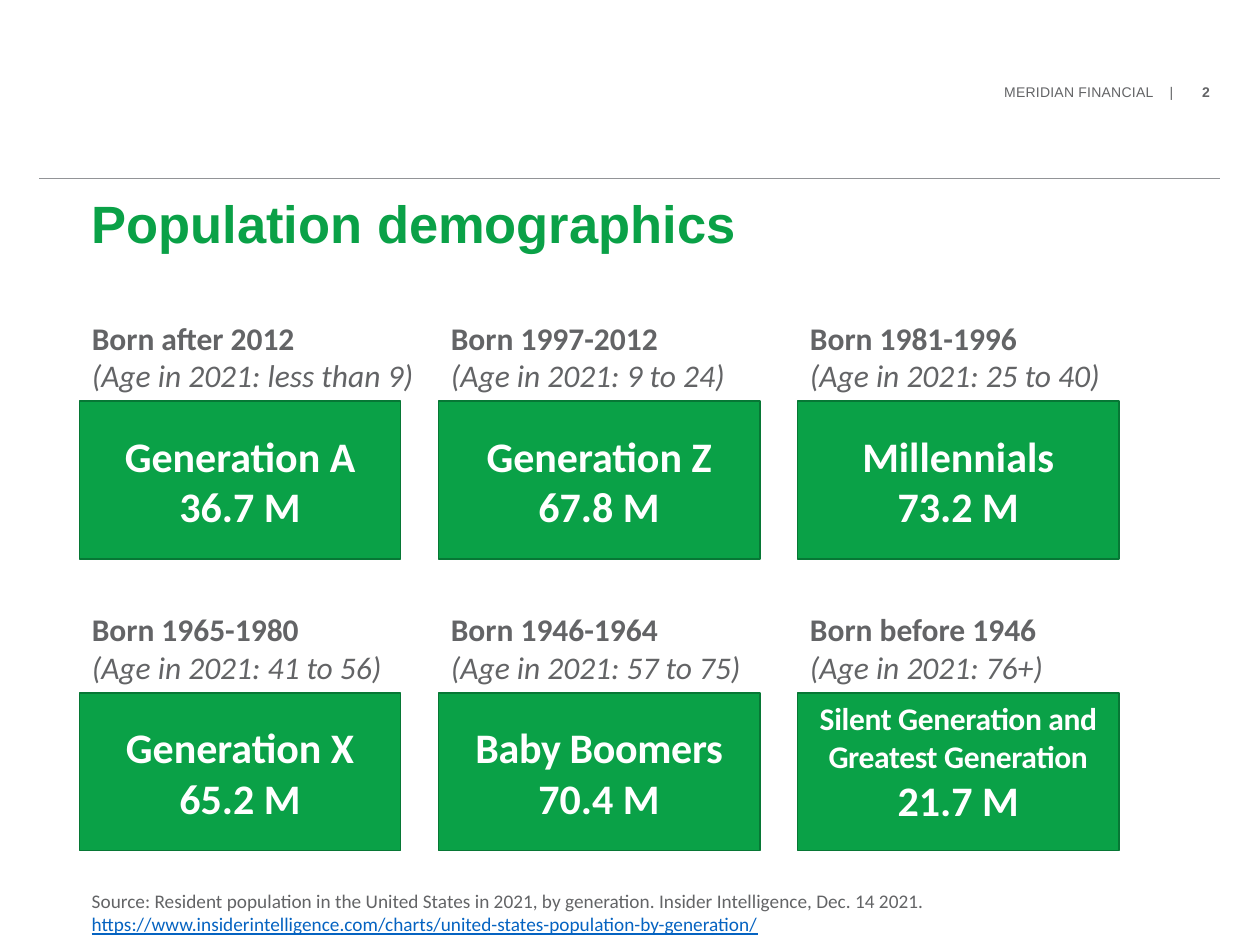
from lxml.etree import SubElement
from pptx import Presentation
from pptx.dml.color import RGBColor
from pptx.enum.shapes import MSO_CONNECTOR, MSO_SHAPE
from pptx.enum.text import MSO_ANCHOR, PP_ALIGN
from pptx.oxml.ns import qn
from pptx.util import Inches, Pt

GREEN = RGBColor(0x0A, 0xA1, 0x47)
DARK_GREEN = RGBColor(0x07, 0x77, 0x35)
GRAY = RGBColor(0x63, 0x64, 0x66)
RULE_GRAY = RGBColor(0x92, 0x94, 0x97)
LINK_BLUE = RGBColor(0x05, 0x63, 0xC1)
WHITE = RGBColor(0xFF, 0xFF, 0xFF)

# Grid in inches: three columns, two rows
LEFT, CARD_WIDTH, COLUMN_STEP = 0.63, 2.55, 2.85
TOP, ROW_STEP = 2.48, 2.315
CAPTION_HEIGHT, CARD_HEIGHT = 0.705, 1.25

# Birth years, age in 2021, generation, population, name size, name height
GENERATIONS = [
    ("after 2012", "less than 9", "Generation A", "36.7 M"),
    ("1997-2012", "9 to 24", "Generation Z", "67.8 M"),
    ("1981-1996", "25 to 40", "Millennials", "73.2 M"),
    ("1965-1980", "41 to 56", "Generation X", "65.2 M"),
    ("1946-1964", "57 to 75", "Baby Boomers", "70.4 M"),
    ("before 1946", "76+", "Silent Generation and Greatest Generation", "21.7 M"),
]


def add_span(para, text, size=18, color=GRAY, font="Calibri", bold=False,
             italic=False, underline=False, spacing=0):
    span = para.add_run()
    span.text = text
    span.font.size = Pt(size)
    span.font.name = font
    span.font.color.rgb = color
    span.font.bold = bold
    span.font.italic = italic
    span.font.underline = underline
    if spacing:
        span._r.get_or_add_rPr().set("spc", str(round(spacing * 100)))
    return span


def add_box(shapes, left, top, width, height):
    box = shapes.add_textbox(Inches(left), Inches(top), Inches(width), Inches(height))
    box.text_frame.word_wrap = True
    box.text_frame.vertical_anchor = MSO_ANCHOR.TOP
    return box


def add_header(page, left, top, width, height):
    frame = add_box(page.shapes, left, top, width, height).text_frame
    frame.margin_left = frame.margin_right = frame.margin_bottom = 0
    frame.margin_top = Inches(0.02)
    para = frame.paragraphs[0]
    tabs = SubElement(para._p.get_or_add_pPr(), qn("a:tabLst"))
    SubElement(tabs, qn("a:tab"), pos=str(Inches(1.57)), algn="l")
    add_span(para, "MERIDIAN FINANCIAL", 8, font="Arial", spacing=0.1)
    add_span(para, "    |\t", 8, font="Arial")
    add_span(para, "2", 8, font="Arial", bold=True)


def add_rule(page, left, top, width):
    rule = page.shapes.add_connector(
        MSO_CONNECTOR.STRAIGHT, Inches(left), Inches(top), Inches(left + width), Inches(top))
    rule.line.color.rgb = RULE_GRAY
    rule.line.width = Pt(0.5)
    SubElement(rule._element.spPr, qn("a:effectLst"))


def add_title(page, left, top, width, height):
    para = add_box(page.shapes, left, top, width, height).text_frame.paragraphs[0]
    para.line_spacing = Pt(31)
    add_span(para, "Population demographics", 30, GREEN, "Arial", bold=True)


def add_generation(page, left, top, born, age, name, population):
    # Caption above the card
    frame = add_box(page.shapes, left, top, CARD_WIDTH + 0.3, CAPTION_HEIGHT).text_frame
    add_span(frame.paragraphs[0], f"Born {born}", bold=True)
    add_span(frame.add_paragraph(), f"(Age in 2021: {age})", italic=True)

    # Card with the name and the population
    card_top = top + CAPTION_HEIGHT
    group = page.shapes.add_group_shape()
    card = group.shapes.add_shape(
        MSO_SHAPE.RECTANGLE, Inches(left), Inches(card_top),
        Inches(CARD_WIDTH), Inches(CARD_HEIGHT))
    card.shadow.inherit = False
    card.fill.solid()
    card.fill.fore_color.rgb = GREEN
    card.line.color.rgb = DARK_GREEN
    card.line.width = Pt(1)

    long_name = len(name) > 20
    offset, height, size = (0, 1.11, 18) if long_name else (0.18, 0.91, 24)
    spacing = -0.2 if len(name) >= 12 and "Generation " not in name[:11] else 0
    frame = add_box(group.shapes, left, card_top + offset, CARD_WIDTH, height).text_frame
    name_para, population_para = frame.paragraphs[0], frame.add_paragraph()
    name_para.alignment = population_para.alignment = PP_ALIGN.CENTER
    add_span(name_para, name, size, WHITE, bold=True, spacing=spacing)
    add_span(population_para, population, 24, WHITE, bold=True)


def add_source(page, left, top, width, height):
    para = add_box(page.shapes, left, top, width, height).text_frame.paragraphs[0]
    add_span(para, "Source: Resident population in the United States in 2021, by generation. "
                   "Insider Intelligence, Dec. 14 2021. ", 11)
    add_span(para, "https://www.insiderintelligence.com/charts/"
                   "united-states-population-by-generation/", 11, LINK_BLUE, underline=True)


def main():
    deck = Presentation()
    deck.slide_width, deck.slide_height = Inches(10), Inches(7.5)
    page = deck.slides.add_slide(deck.slide_layouts[6])

    add_rule(page, 0.31, 1.42, 9.37)
    add_header(page, 7.97, 0.64, 1.74, 0.15)
    add_title(page, LEFT, 1.54, 6.54, 1.04)
    for index, generation in enumerate(GENERATIONS):
        row, column = divmod(index, 3)
        add_generation(page, LEFT + column * COLUMN_STEP, TOP + row * ROW_STEP, *generation)
    add_source(page, LEFT, 7.01, 9.37, 0.47)

    deck.save("out.pptx")


if __name__ == "__main__":
    main()
